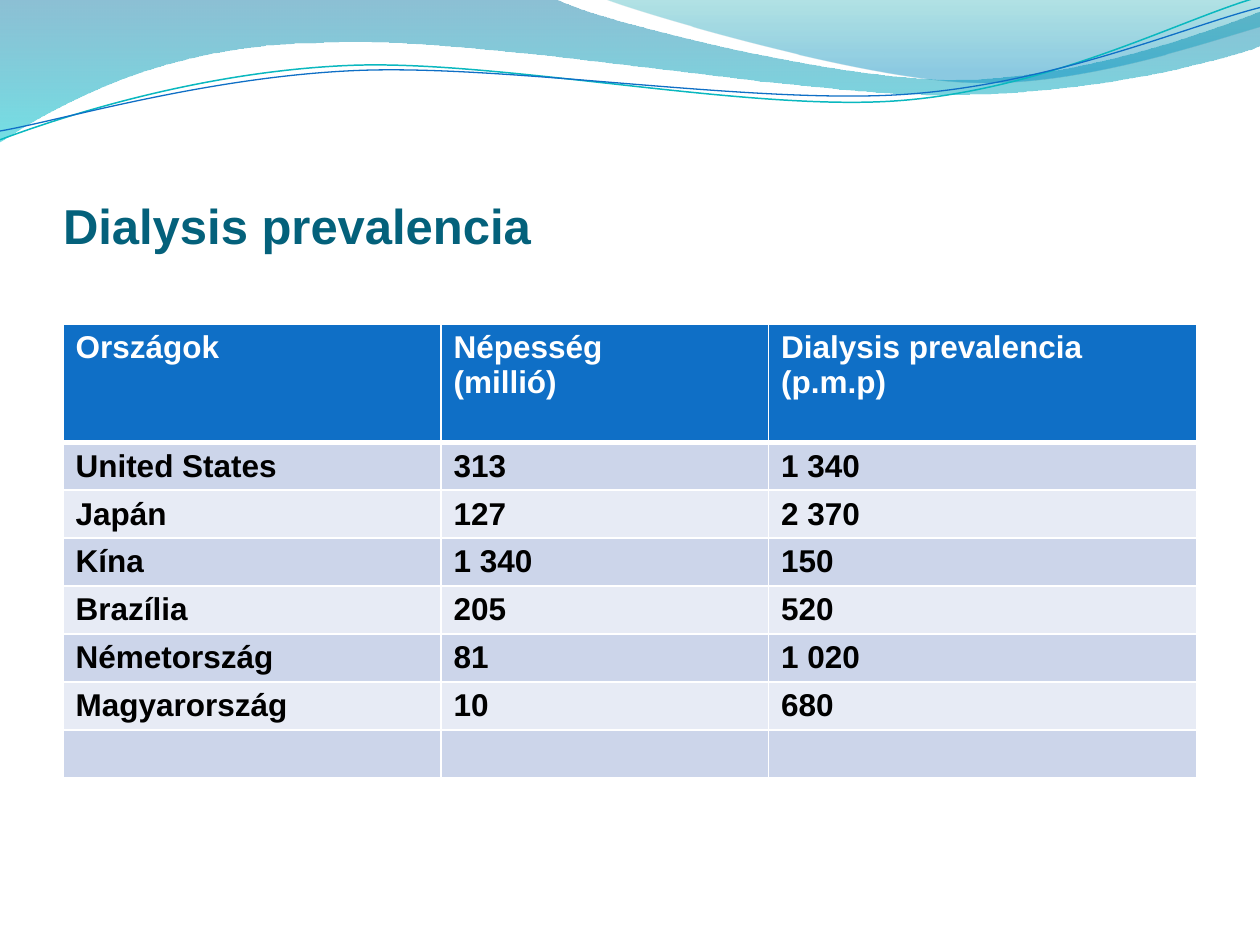
from lxml import etree
from pptx import Presentation
from pptx import util as u
from pptx.dml.color import RGBColor
from pptx.enum import text
from pptx.oxml.ns import qn

COLS, ROWS = 10, 7.5


def rgb(value):
    return RGBColor.from_string(value)


class Deck:
    font = "Arial"
    title_color, header_color = "04617B", "0F6FC6"
    bands = ("CCD5EA", "E7EBF5")
    rule_color = "FFFFFF"

    def __init__(self):
        self.prs = Presentation()
        self.prs.slide_width, self.prs.slide_height = u.Inches(10), u.Inches(7.5)
        self.s = self.prs.slides.add_slide(self.prs.slide_layouts[5])

    def x(self, cols):
        return round(cols * self.prs.slide_width / COLS)

    def y(self, rows):
        return round(rows * self.prs.slide_height / ROWS)

    def style(self, p, size, color):
        for r in p.runs:
            r.font.name, r.font.size, r.font.bold = self.font, u.Pt(size), True
            r.font.color.rgb = rgb(color)

    def outline(self, start, segments, close):
        """Segments hold 2 numbers for a line or 6 for a cubic curve."""
        numbers = [n for seg in segments for n in seg]
        points = [(self.x(px), self.y(py))
                  for px, py in zip(numbers[::2], numbers[1::2])]
        builder = self.s.shapes.build_freeform(self.x(start[0]), self.y(start[1]))
        builder.add_line_segments(points, close=close)
        sp = builder.convert_to_shape()
        sp.shadow.inherit = False

        # Join the three points of each curve into one Bezier step
        steps = iter(list(sp._element.spPr.iter(qn("a:lnTo"))))
        for seg in segments:
            step = next(steps)
            if len(seg) == 6:
                curve = etree.Element(qn("a:cubicBezTo"))
                step.addprevious(curve)
                for line in (step, next(steps), next(steps)):
                    curve.append(line[0])
                    line.getparent().remove(line)
        return sp

    def wave(self, start, segments, stops):
        sp = self.outline(start, segments, True)
        sp.line.fill.background()
        sp.fill.gradient()
        sp.fill.gradient_angle = 270
        for stop, (position, color, _) in zip(sp.fill.gradient_stops, stops):
            stop.position, stop.color.rgb = position, rgb(color)
        colors = sp._element.spPr.iter(qn("a:srgbClr"))
        for node, (_, _, opacity) in zip(colors, stops):
            etree.SubElement(node, qn("a:alpha"), val=str(opacity * 1000))

    def strand(self, start, segments, color, width):
        sp = self.outline(start, segments, False)
        sp.fill.background()
        sp.line.color.rgb, sp.line.width = rgb(color), u.Pt(width)

    def title(self, words, left, top, width, height):
        sp = self.s.shapes.title
        self.s.shapes._spTree.append(sp._element)  # in front of the waves
        sp.left, sp.top, sp.width, sp.height = (
            self.x(left), self.y(top), self.x(width), self.y(height))
        tf = sp.text_frame
        tf.text = words
        tf.vertical_anchor = text.MSO_ANCHOR.BOTTOM
        tf.margin_left = tf.margin_right = tf.margin_bottom = 0
        tf.paragraphs[0].alignment = text.PP_ALIGN.LEFT
        self.style(tf.paragraphs[0], 28, self.title_color)

    def borders(self, cell, top, bottom):
        tc_pr = cell._tc.get_or_add_tcPr()
        for side, width in (("L", 1), ("R", 1), ("T", top), ("B", bottom)):
            ln = etree.SubElement(tc_pr, qn("a:ln" + side), w=str(u.Pt(width)))
            fill = etree.SubElement(ln, qn("a:solidFill"))
            etree.SubElement(fill, qn("a:srgbClr"), val=self.rule_color)

    def table(self, data, left, top, widths, header, row):
        heights = [header] + [row] * (len(data) - 1)
        table = self.s.shapes.add_table(
            len(data), len(widths), self.x(left), self.y(top),
            self.x(sum(widths)), self.y(sum(heights))).table
        for column, width in zip(table.columns, widths):
            column.width = self.x(width)
        for i, values in enumerate(data):
            table.rows[i].height = self.y(heights[i])
            for cell, value in zip(table.rows[i].cells, values):
                self.borders(cell, 3 if i == 1 else 1, 3 if i == 0 else 1)
                cell.fill.solid()
                cell.fill.fore_color.rgb = rgb(
                    self.bands[(i - 1) % 2] if i else self.header_color)
                p = cell.text_frame.paragraphs[0]
                if value:
                    p.text = value
                    self.style(p, 18, "000000" if i else "FFFFFF")
                else:
                    end = etree.SubElement(p._p, qn("a:endParaRPr"), sz="1800")
                    etree.SubElement(end, qn("a:latin"), typeface=self.font)


def main():
    deck = Deck()

    # Wave bands along the top
    deck.wave((0, -0.01),
              [(4.4, -0.01), (4.76, 0.17, 6.64, 0.63, 7.58, 0.63),
               (8.53, 0.63, 9.58, 0.26, 10, 0.09), (10.01, 0.36),
               (9.83, 0.44, 8.7, 0.76, 7.46, 0.75),
               (6.22, 0.75, 3.82, 0.28, 2.57, 0.34),
               (1.29, 0.35, 0.46, 0.83, -0.01, 1.13)],
              [(0, "0074A1", 45), (1, "00C6CF", 55)])
    deck.wave((4.79, -0.01),
              [(5.09, 0.11, 6.82, 0.62, 7.69, 0.65),
               (8.56, 0.69, 9.61, 0.32, 10, 0.21), (10, 0)],
              [(0, "00A1A9", 30), (0.8, "008BBF", 45)])

    # Thin strands
    deck.strand((0, 1.11),
                [(0.48, 0.93, 1.58, 0.57, 2.77, 0.52),
                 (3.95, 0.47, 5.93, 0.89, 7.13, 0.8),
                 (8.33, 0.71, 9.38, 0.15, 9.98, -0.02)], "0AB8BF", 0.85)
    deck.strand((0, 1.04),
                [(0.47, 0.96, 1.64, 0.61, 2.83, 0.56),
                 (4.03, 0.51, 5.97, 0.83, 7.17, 0.75),
                 (8.36, 0.67, 9.41, 0.21, 10, 0.06)], "0F6FC6", 0.75)

    # Title and table
    deck.title("Dialysis prevalencia", 0.5, 0.77, 9, 1.25)
    deck.table([
        ("Országok", "Népesség\v(millió)", "Dialysis prevalencia (p.m.p)"),
        ("United States", "313", "1 340"),
        ("Japán", "127", "2 370"),
        ("Kína", "1 340", "150"),
        ("Brazília", "205", "520"),
        ("Németország", "81", "1 020"),
        ("Magyarország", "10", "680"),
        ("", "", ""),
    ], 0.5, 2.57, (3, 2.6, 3.4), header=0.94, row=0.38)

    deck.prs.save("out.pptx")


if __name__ == "__main__":
    main()
